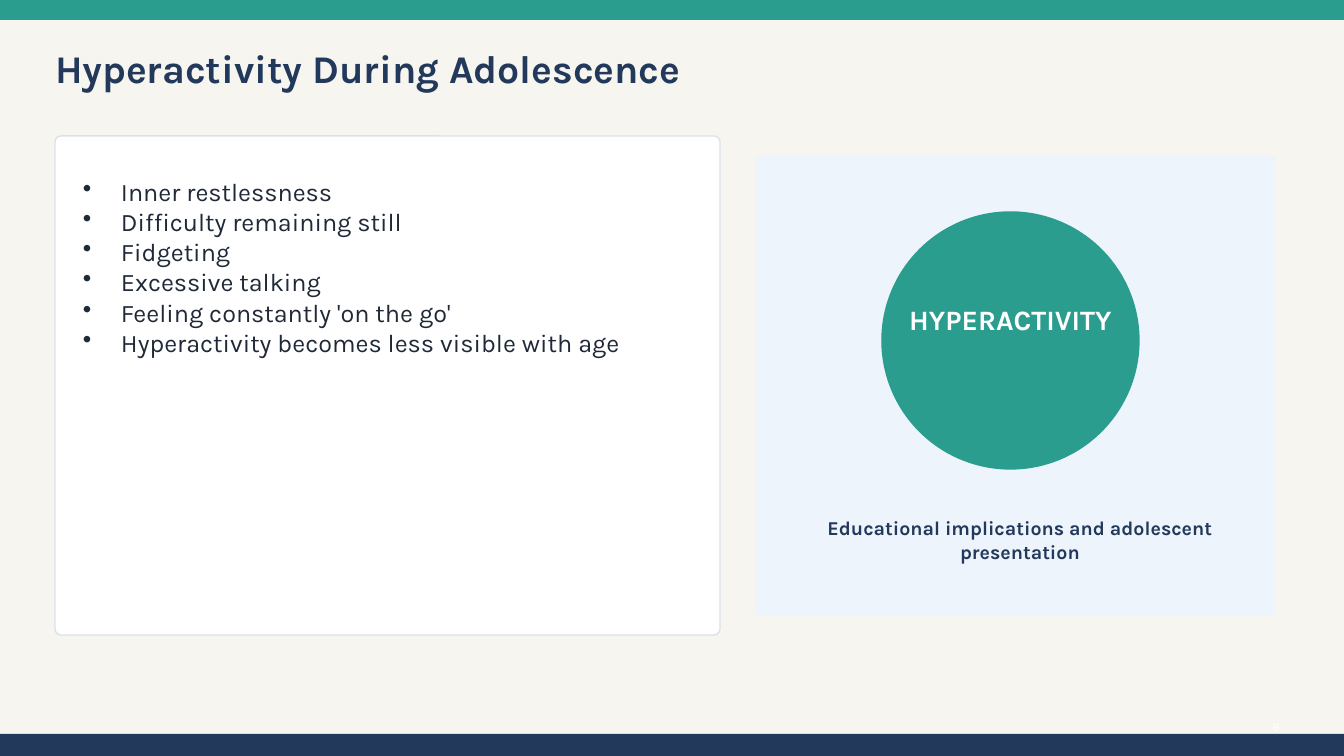
import pptx
import pptx.dml.color
import pptx.enum.shapes
import pptx.enum.text
import pptx.oxml.ns
import pptx.util
import lxml.etree

RGBColor = pptx.dml.color.RGBColor
Shape = pptx.enum.shapes.MSO_SHAPE
Align = pptx.enum.text.PP_ALIGN
Anchor = pptx.enum.text.MSO_ANCHOR

CREAM = RGBColor(0xF7, 0xF5, 0xF0)
TEAL = RGBColor(0x2A, 0x9D, 0x8F)
NAVY = RGBColor(0x23, 0x39, 0x5B)
WHITE = RGBColor(0xFF, 0xFF, 0xFF)
BORDER = RGBColor(0xD9, 0xE2, 0xEC)
INK = RGBColor(0x1F, 0x29, 0x37)
PALE_BLUE = RGBColor(0xEE, 0xF4, 0xFB)

FONT = "Karla"
EMU_PER_PX = 914400 / 100.8
WIDTH, HEIGHT = 1344, 756
TOP_BAR, BOTTOM_BAR = 20, 22
BULLET_INDENT = 38
CARD_ROUNDING = 0.012

TITLE = "Hyperactivity During Adolescence"
SYMPTOMS = [
    "Inner restlessness",
    "Difficulty remaining still",
    "Fidgeting",
    "Excessive talking",
    "Feeling constantly 'on the go'",
    "Hyperactivity becomes less visible with age",
]
CIRCLE_LABEL = "HYPERACTIVITY"
CAPTION = "Educational implications and adolescent presentation"
PAGE_NUMBER = "6"


def px(length):
    return pptx.util.Emu(round(length * EMU_PER_PX))


def add_block(slide, kind, box, fill, line=None):
    shape = slide.shapes.add_shape(kind, *map(px, box))
    shape.shadow.inherit = False
    shape.fill.solid()
    shape.fill.fore_color.rgb = fill
    if line is None:
        shape.line.fill.background()
    else:
        shape.line.color.rgb = line
        shape.line.width = pptx.util.Pt(1)
    return shape


def add_bullet(paragraph):
    properties = paragraph._p.get_or_add_pPr()
    properties.set("marL", str(px(BULLET_INDENT)))
    properties.set("indent", str(-px(BULLET_INDENT)))
    bullet = lxml.etree.SubElement(properties, pptx.oxml.ns.qn("a:buChar"))
    bullet.set("char", "•")


def add_text(slide, box, lines, size, color, bold=False,
             align=Align.LEFT, anchor=Anchor.MIDDLE, bulleted=False):
    frame = slide.shapes.add_textbox(*map(px, box)).text_frame
    frame.word_wrap = True
    frame.vertical_anchor = anchor
    frame.margin_left = frame.margin_right = 0
    frame.margin_top = frame.margin_bottom = 0
    frame.text = "\n".join(lines)
    for paragraph in frame.paragraphs:
        if bulleted:
            add_bullet(paragraph)
        paragraph.alignment = align
        paragraph.font.name = FONT
        paragraph.font.size = pptx.util.Pt(size)
        paragraph.font.bold = bold
        paragraph.font.color.rgb = color


def main():
    presentation = pptx.Presentation()
    presentation.slide_width = px(WIDTH)
    presentation.slide_height = px(HEIGHT)
    slide = presentation.slides.add_slide(presentation.slide_layouts[6])
    slide.background.fill.solid()
    slide.background.fill.fore_color.rgb = CREAM

    add_block(slide, Shape.RECTANGLE, (0, 0, WIDTH, TOP_BAR), TEAL)
    add_block(slide, Shape.RECTANGLE,
              (0, HEIGHT - BOTTOM_BAR, WIDTH, BOTTOM_BAR), NAVY)
    add_text(slide, (1245, 718, 35, 18), [PAGE_NUMBER], 9, WHITE, align=Align.RIGHT)
    add_text(slide, (55, 38, 887, 60), [TITLE], 28, NAVY, bold=True)

    card = add_block(slide, Shape.ROUNDED_RECTANGLE, (55, 136, 665, 499), WHITE, BORDER)
    card.adjustments[0] = CARD_ROUNDING
    add_text(slide, (83, 176, 600, 428), SYMPTOMS, 18, INK,
             anchor=Anchor.TOP, bulleted=True)

    add_block(slide, Shape.RECTANGLE, (756, 156, 519, 459), PALE_BLUE, PALE_BLUE)
    add_block(slide, Shape.OVAL, (882, 212, 257, 257), TEAL, TEAL)
    add_text(slide, (902, 297, 217, 45), [CIRCLE_LABEL], 20, WHITE,
             bold=True, align=Align.CENTER)
    add_text(slide, (806, 504, 428, 71), [CAPTION], 14, NAVY,
             bold=True, align=Align.CENTER)

    presentation.save("out.pptx")


if __name__ == "__main__":
    main()
